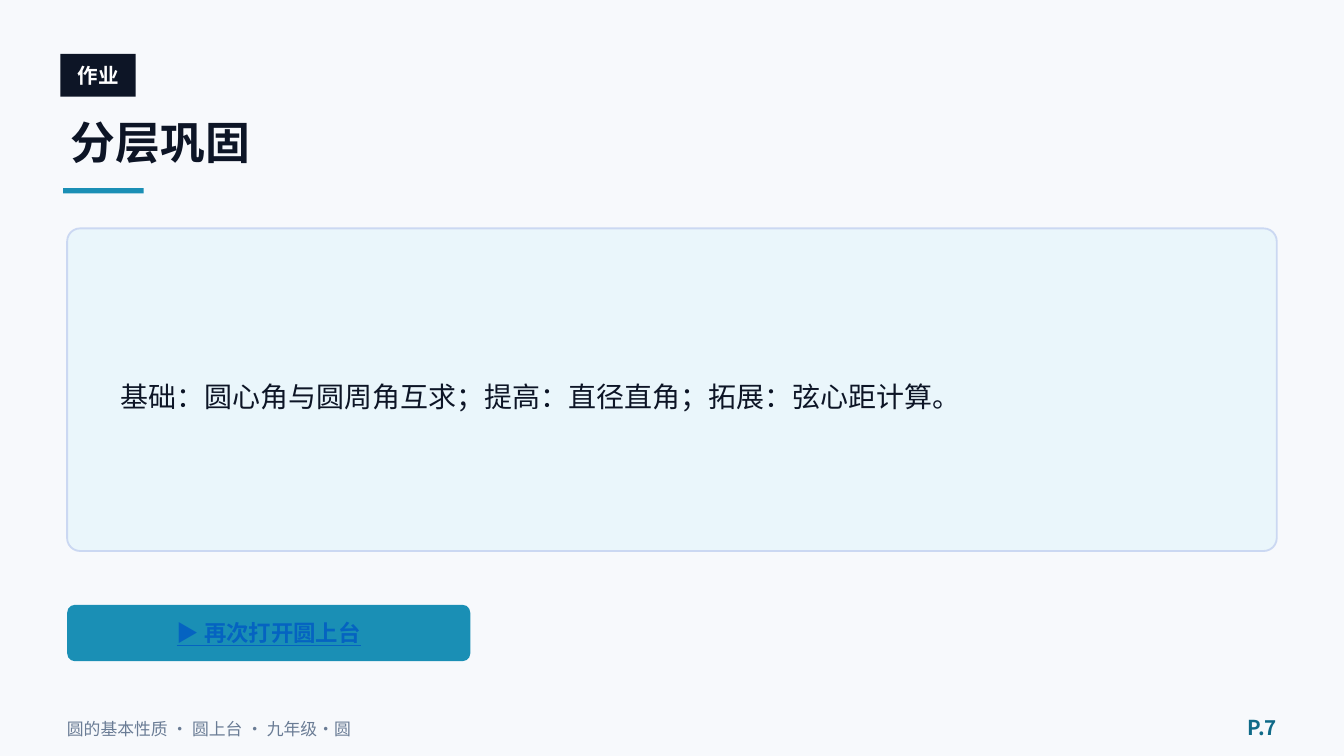
from pptx import Presentation
from pptx.dml.color import RGBColor
from pptx.enum.shapes import MSO_SHAPE
from pptx.enum.text import MSO_ANCHOR, PP_ALIGN
from pptx.oxml.ns import qn
from pptx.util import Inches, Pt

RECT, ROUND = MSO_SHAPE.RECTANGLE, MSO_SHAPE.ROUNDED_RECTANGLE
LEFT, CENTER, RIGHT = PP_ALIGN.LEFT, PP_ALIGN.CENTER, PP_ALIGN.RIGHT
MIDDLE = MSO_ANCHOR.MIDDLE
WIDTH = 10
HEIGHT = WIDTH * 9 / 16
FONT = "Noto Sans CJK SC"
COLORS = {
    "page": "F7F9FC", "ink": "0D1526", "white": "FFFFFF", "accent": "1A8FB5",
    "card": "EAF6FB", "border": "CBD8F2", "muted": "6A7C95",
    "number": "0F6A88", "action": "0563C1",
}


def color(name):
    return RGBColor.from_string(COLORS[name])


def write(box, text, size=12, ink="ink", bold=False, underline=False, align=LEFT):
    frame = box.text_frame
    frame.word_wrap = True
    frame.vertical_anchor = MIDDLE
    para = frame.paragraphs[0]
    para.alignment = align
    span = para.add_run()
    span.text = text
    font = span.font
    font.name, font.size, font.bold = FONT, Pt(size), bold
    font.underline = underline
    font.color.rgb = color(ink)
    east_asian = font._element.makeelement(qn("a:ea"), {"typeface": FONT})
    font._element.find(qn("a:latin")).addnext(east_asian)


class LessonSlide:
    """Hold the lesson style and the slide; lengths are tenths of an inch on a grid."""

    cell = Inches(0.1)

    def __init__(self, deck):
        self.page = deck.slides.add_slide(deck.slide_layouts[6])
        fill = self.page.background.fill
        fill.solid()
        fill.fore_color.rgb = color("page")

    def place(self, *cells):
        return [round(count * self.cell) for count in cells]

    def panel(self, area, fill, kind=RECT, corner=None, border=None):
        box = self.page.shapes.add_shape(kind, *self.place(*area))
        box.shadow.inherit = False
        box.fill.solid()
        box.fill.fore_color.rgb = color(fill)
        if corner is not None:
            box.adjustments[0] = corner
        if border:
            box.line.color.rgb = color(border)
            box.line.width = Pt(1)
        else:
            box.line.fill.background()
        return box

    def label(self, area, text, **style):
        box = self.page.shapes.add_textbox(*self.place(*area))
        write(box, text, **style)


def main():
    deck = Presentation()
    deck.slide_width, deck.slide_height = Inches(WIDTH), Inches(HEIGHT)
    slide = LessonSlide(deck)

    slide.panel((4.5, 4, 5.6, 3.2), "ink")
    slide.label((4.5, 3.9, 5.6, 3.4), "作业", size=11, ink="white", bold=True, align=CENTER)
    slide.label((4.3, 7.8, 90, 5.5), "分层巩固", size=24, bold=True)
    slide.panel((4.7, 14, 6, 0.4), "accent")

    slide.panel((5, 17, 90, 24), "card", ROUND, 0.04, "border")
    slide.label((8, 19.5, 84, 20),
                "基础：圆心角与圆周角互求；提高：直径直角；拓展：弦心距计算。", size=15)

    button = slide.panel((5, 45, 30, 4.2), "accent", ROUND, 0.14)
    write(button, "▶ 再次打开圆上台", ink="action", bold=True, underline=True, align=CENTER)

    slide.label((4, 52.8, 72, 2.8), "圆的基本性质 · 圆上台 · 九年级·圆", size=9, ink="muted")
    slide.label((90, 52.6, 6, 3), "P.7", size=11, ink="number", bold=True, align=RIGHT)
    deck.save("out.pptx")


if __name__ == "__main__":
    main()
